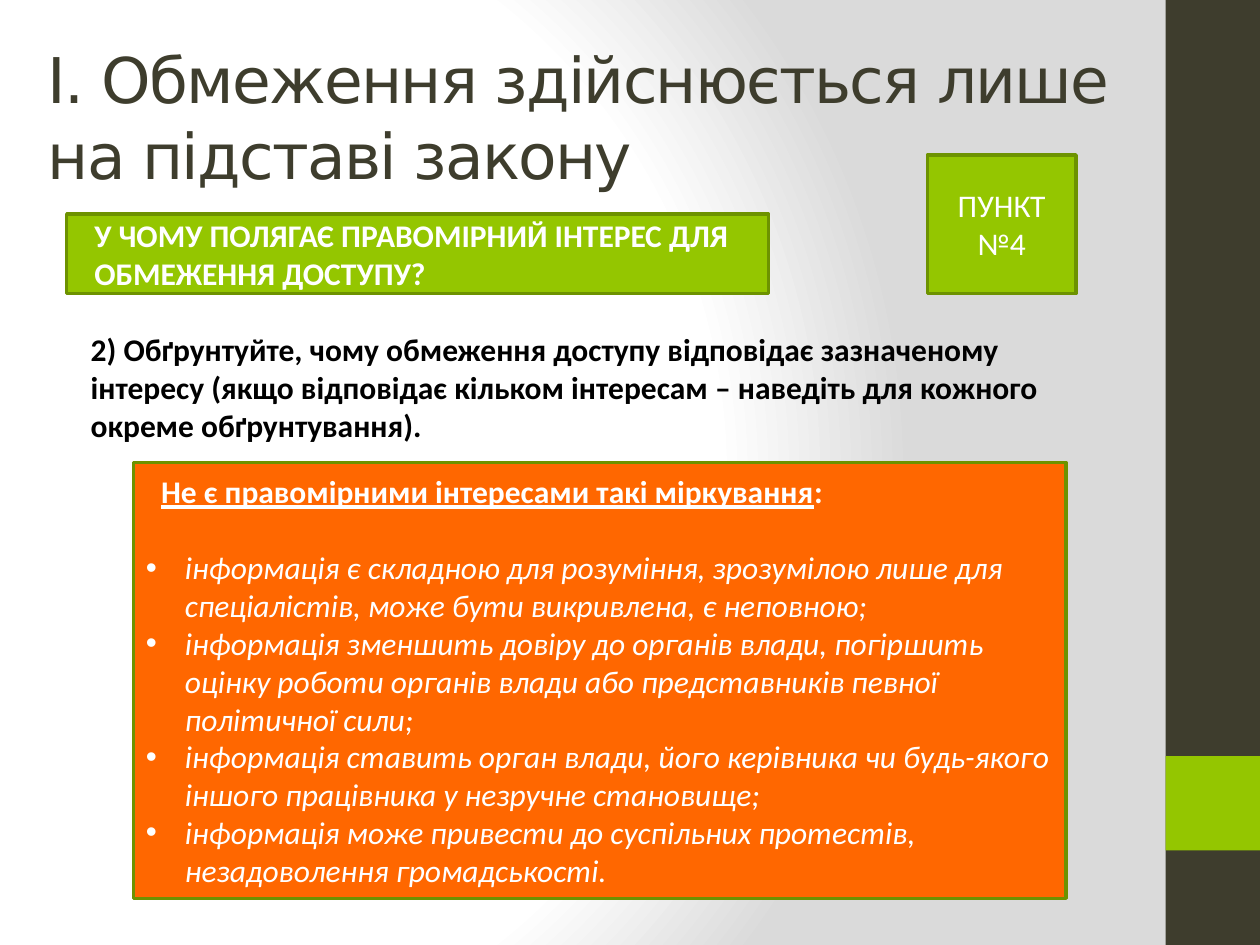
import pptx
import pptx.util
import pptx.oxml
import pptx.oxml.ns
import pptx.dml.color
import pptx.enum.shapes
import pptx.enum.text

Inches, Pt = pptx.util.Inches, pptx.util.Pt
ALIGN = pptx.enum.text.PP_ALIGN
ANCHOR = pptx.enum.text.MSO_ANCHOR
NS = pptx.oxml.ns.nsdecls("a", "p")

COLORS = {"dark": "3E3D2D", "green": "94C600", "edge": "6D9200",
          "orange": "FF6700", "white": "FFFFFF", "gray": "DADADA",
          "black": "000000"}
BASE = {"name": "Calibri", "size": Pt(18), "color": "white"}
BOLD = {**BASE, "bold": True}
ITALIC = {**BASE, "italic": True}
INDENT = 0.12
HANG = 0.31

TITLE = "І. Обмеження здійснюється лише на підставі закону"
TASK = ("2) Обґрунтуйте, чому обмеження доступу відповідає зазначеному "
        "інтересу (якщо відповідає кільком інтересам – наведіть для кожного "
        "окреме обґрунтування).")
QUERY = "У ЧОМУ ПОЛЯГАЄ ПРАВОМІРНИЙ ІНТЕРЕС ДЛЯ ОБМЕЖЕННЯ ДОСТУПУ?"
HEAD = "Не є правомірними інтересами такі міркування"
ITEMS = [
    "інформація є складною для розуміння, зрозумілою лише для "
    "спеціалістів, може бути викривлена, є неповною;",
    "інформація зменшить довіру до органів влади, погіршить оцінку роботи "
    "органів влади або представників певної політичної сили;",
    "інформація ставить орган влади, його керівника чи будь-якого іншого "
    "працівника у незручне становище;",
    "інформація може привести до суспільних протестів, незадоволення "
    "громадськості.",
]


def rgb(key):
    return pptx.dml.color.RGBColor.from_string(COLORS[key])


def add_run(para, text, style):
    run = para.add_run()
    run.text = text
    for key, value in style.items():
        if key == "color":
            run.font.color.rgb = rgb(value)
        else:
            setattr(run.font, key, value)
    return run


def indent(para, left, first=0, mark=None):
    """Set the margin, first-line offset and bullet of a paragraph."""
    props = para._p.get_or_add_pPr()
    props.set("marL", str(Inches(left)))
    props.set("indent", str(Inches(first)))
    tag = f'<a:buChar {NS} char="{mark}"/>' if mark else f"<a:buNone {NS}/>"
    if mark:
        props.append(pptx.oxml.parse_xml(
            f'<a:buFont {NS} typeface="Arial"/>'))
    props.append(pptx.oxml.parse_xml(tag))


def add_rect(slide, box, fill, edge=None):
    shape = slide.shapes.add_shape(
        pptx.enum.shapes.MSO_SHAPE.RECTANGLE, *map(Inches, box))
    shape.shadow.inherit = False
    shape.fill.solid()
    shape.fill.fore_color.rgb = rgb(fill)
    if edge:
        shape.line.color.rgb = rgb(edge)
        shape.line.width = Pt(2)
    else:
        shape.line.fill.background()
    frame = shape.text_frame
    frame.word_wrap = True
    frame.vertical_anchor = ANCHOR.MIDDLE
    frame.paragraphs[0].alignment = ALIGN.LEFT
    return shape


def set_holder(holder, box, anchor):
    """Move a placeholder and return its first paragraph."""
    sides = zip(("left", "top", "width", "height"), box)
    for side, value in sides:
        setattr(holder, side, Inches(value))
    frame = holder.text_frame
    frame.word_wrap = True
    frame.auto_size = pptx.enum.text.MSO_AUTO_SIZE.NONE
    frame.vertical_anchor = anchor
    para = frame.paragraphs[0]
    para.alignment = ALIGN.LEFT
    return para


def paint_back(slide):
    stops = "".join(
        f'<a:gs pos="{pos * 1000}"><a:srgbClr val="{COLORS[key]}"/></a:gs>'
        for pos, key in ((0, "white"), (75, "white"), (100, "gray")))
    slide.element.cSld.insert(0, pptx.oxml.parse_xml(
        f'<p:bg {NS}><p:bgPr><a:gradFill rotWithShape="1">'
        f'<a:gsLst>{stops}</a:gsLst><a:path path="circle">'
        '<a:fillToRect l="20000" t="50000" r="100000" b="50000"/></a:path>'
        '</a:gradFill><a:effectLst/></p:bgPr></p:bg>'))


def add_band(slide, box):
    left, top, width, height = box
    add_rect(slide, box, "dark")
    add_rect(slide, (left, top + 0.8 * height, width, width), "green")


def add_title(slide, box):
    para = set_holder(slide.shapes.title, box, ANCHOR.MIDDLE)
    style = {"name": "DejaVu Sans", "size": Pt(36), "color": "dark"}
    run = add_run(para, TITLE, style)
    run._r.get_or_add_rPr().set("spc", "-100")


def add_task(slide, box):
    para = set_holder(slide.placeholders[1], box, ANCHOR.TOP)
    para.space_before = Pt(3.6)
    indent(para, INDENT)
    add_run(para, TASK, {**BOLD, "color": "black"})


def add_query(slide, box):
    para = add_rect(slide, box, "green", "edge").text_frame.paragraphs[0]
    indent(para, INDENT)
    add_run(para, QUERY, BOLD)


def add_badge(slide, box):
    para = add_rect(slide, box, "green", "edge").text_frame.paragraphs[0]
    para.alignment = ALIGN.CENTER
    add_run(para, "ПУНКТ №4", BASE)


def add_panel(slide, box):
    frame = add_rect(slide, box, "orange", "edge").text_frame
    para = frame.paragraphs[0]
    para.space_after = Pt(22)
    indent(para, INDENT)
    add_run(para, HEAD, {**BOLD, "underline": True})
    add_run(para, ":", BOLD)
    for item in ITEMS:
        para = frame.add_paragraph()
        para.alignment = ALIGN.LEFT
        indent(para, HANG, -HANG, "•")
        add_run(para, item, ITALIC)


def main():
    deck = pptx.Presentation()
    deck.slide_width, deck.slide_height = Inches(10), Inches(7.5)
    slide = deck.slides.add_slide(deck.slide_layouts[1])
    paint_back(slide)
    add_band(slide, (9.25, 0, 0.75, 7.5))
    add_title(slide, (0.28, 0.3, 8.9, 1.25))
    add_task(slide, (0.5, 2.57, 8.33, 1.1))
    add_query(slide, (0.53, 1.7, 5.57, 0.63))
    add_badge(slide, (7.36, 1.23, 1.18, 1.1))
    add_panel(slide, (1.06, 3.67, 7.4, 3.46))
    deck.save("out.pptx")


if __name__ == "__main__":
    main()
